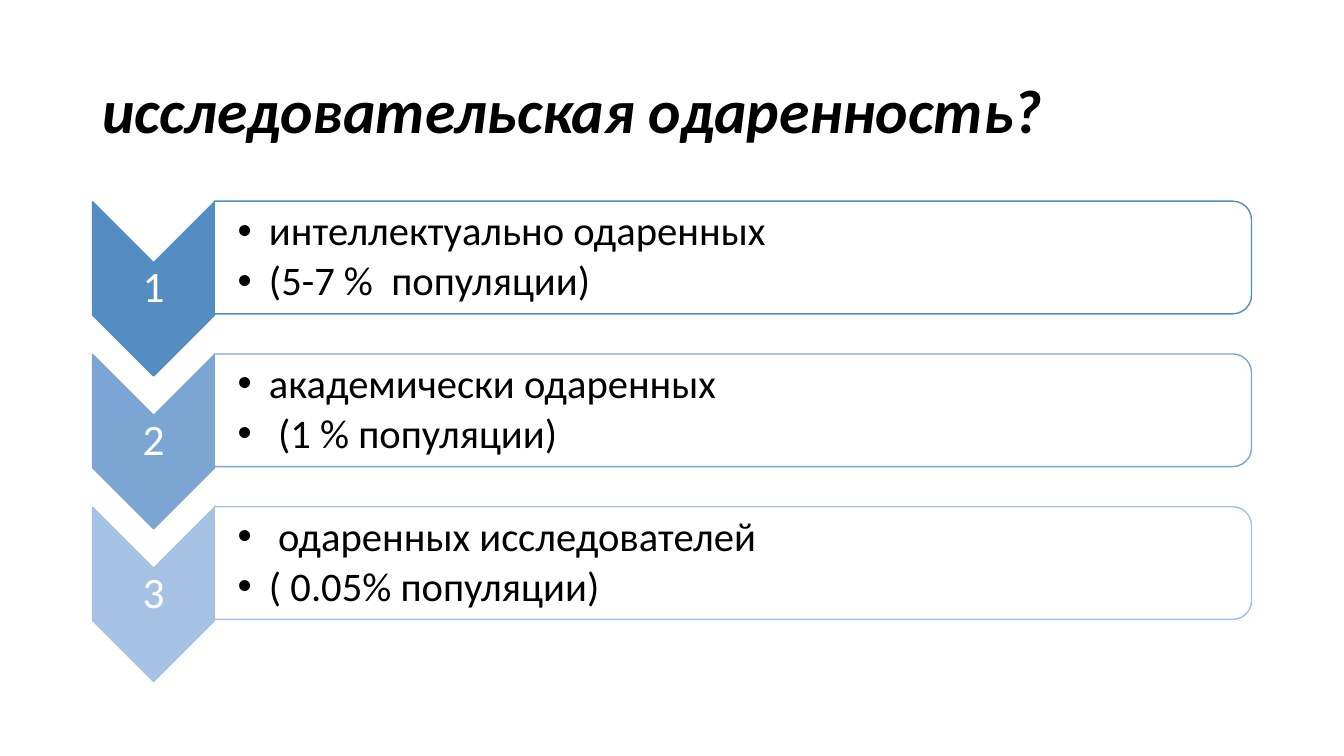
from dataclasses import dataclass

from lxml import etree
from pptx import Presentation
from pptx.dml.color import RGBColor
from pptx.enum.shapes import MSO_SHAPE
from pptx.enum.text import MSO_ANCHOR, PP_ALIGN
from pptx.oxml.ns import qn
from pptx.util import Cm, Pt

CHEVRON = MSO_SHAPE.CHEVRON
PANEL = MSO_SHAPE.ROUND_2_SAME_RECTANGLE
MIDDLE = MSO_ANCHOR.MIDDLE
LEFT, CENTER = PP_ALIGN.LEFT, PP_ALIGN.CENTER

FIRST_ROW_CENTER, ROW_PITCH = 6.49, 3.85
CHEVRON_DROP = 0.79
INSET = 0.05


@dataclass
class Level:
    number: str
    color: str
    lines: list[str]


@dataclass
class TextStyle:
    font: dict
    color: str = "000000"
    alignment: int = LEFT
    space_after: float = 0
    insets: tuple = (INSET, INSET, INSET, INSET)
    bulleted: bool = False


TITLE = TextStyle({"size": Pt(44), "bold": True, "italic": True},
                  insets=(0.25, 0.13, 0.25, 0.13))
NUMBER = TextStyle({"size": Pt(31)}, "FFFFFF", CENTER)
BODY = TextStyle({"size": Pt(29)}, space_after=4.35,
                 insets=(0.58, INSET, INSET, INSET), bulleted=True)

LEVELS = [
    Level("1", "538DC1", ["интеллектуально одаренных", "(5-7 %  популяции)"]),
    Level("2", "7BA6D3", ["академически одаренных", " (1 % популяции)"]),
    Level("3", "A5C1E3", [" одаренных исследователей", "( 0.05% популяции)"]),
]


def rgb(value: str) -> RGBColor:
    return RGBColor.from_string(value)


def set_attributes(target, values: dict) -> None:
    for name, value in values.items():
        setattr(target, name, value)


def add_bullet(paragraph) -> None:
    properties = paragraph._p.get_or_add_pPr()
    properties.set("marL", str(Cm(0.79)))
    properties.set("indent", str(Cm(-0.79)))
    etree.SubElement(properties, qn("a:buFont")).set("typeface", "Arial")
    etree.SubElement(properties, qn("a:buChar")).set("char", "•")


def add_text(slide, left: float, top: float, width: float, height: float,
             lines: list[str], style: TextStyle) -> None:
    box = slide.shapes.add_textbox(Cm(left), Cm(top), Cm(width), Cm(height))
    frame = box.text_frame
    sides = ("margin_left", "margin_top", "margin_right", "margin_bottom")
    margins = {side: Cm(inset) for side, inset in zip(sides, style.insets)}
    set_attributes(frame, {"word_wrap": True, "vertical_anchor": MIDDLE, **margins})
    for index, line in enumerate(lines):
        paragraph = frame.add_paragraph() if index else frame.paragraphs[0]
        set_attributes(paragraph, {"alignment": style.alignment, "line_spacing": 0.9,
                                   "space_after": Pt(style.space_after)})
        if style.bulleted:
            add_bullet(paragraph)
        run = paragraph.add_run()
        run.text = line
        set_attributes(run.font, {"name": "Calibri", **style.font})
        run.font.color.rgb = rgb(style.color)


def add_turned_shape(slide, kind: int, center_x: float, center_y: float,
                     width: float, height: float, fill: str, line: str) -> None:
    """Place a shape by its center and turn it a quarter clockwise."""
    shape = slide.shapes.add_shape(kind, Cm(center_x - width / 2),
                                   Cm(center_y - height / 2), Cm(width), Cm(height))
    shape.rotation = 90
    shape.shadow.inherit = False
    shape.fill.solid()
    shape.fill.fore_color.rgb = rgb(fill)
    shape.line.color.rgb = rgb(line)
    shape.line.width = Pt(1)


def add_level(slide, level: Level, center: float) -> None:
    chevron_center = center + CHEVRON_DROP
    # Numbered chevron
    add_turned_shape(slide, CHEVRON, 3.87, chevron_center, 4.39, 3.07,
                     level.color, level.color)
    add_text(slide, 2.34, chevron_center - 0.66, 3.07, 1.32, [level.number], NUMBER)
    # Outlined panel with bullets
    add_turned_shape(slide, PANEL, 18.47, center, 2.84, 26.14, "FFFFFF", level.color)
    add_text(slide, 5.41, center - 1.28, 26.01, 2.56, level.lines, BODY)


def main() -> None:
    presentation = Presentation()
    set_attributes(presentation, {"slide_width": Cm(33.87), "slide_height": Cm(19.05)})
    slide = presentation.slides.add_slide(presentation.slide_layouts[6])

    # Title
    add_text(slide, 2.33, 1.01, 29.21, 3.68, ["исследовательская одаренность?"], TITLE)

    # Levels of giftedness
    for row, level in enumerate(LEVELS):
        add_level(slide, level, FIRST_ROW_CENTER + row * ROW_PITCH)

    presentation.save("out.pptx")


if __name__ == "__main__":
    main()
